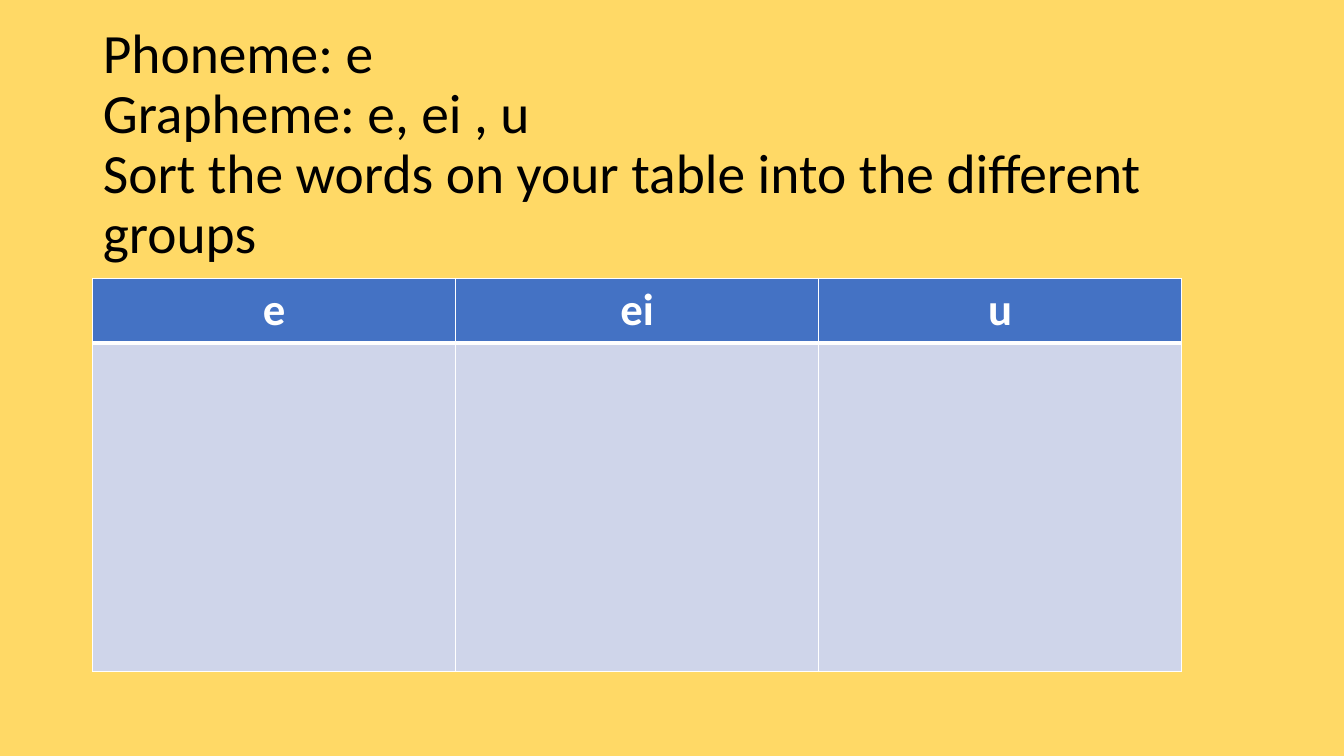
from lxml import etree
from pptx import Presentation
from pptx.dml.color import RGBColor
from pptx.enum.text import MSO_ANCHOR, MSO_AUTO_SIZE, PP_ALIGN
from pptx.oxml.ns import qn
from pptx.util import Inches, Pt

LEFT = PP_ALIGN.LEFT
CENTER = PP_ALIGN.CENTER
MIDDLE = MSO_ANCHOR.MIDDLE
NO_AUTOFIT = MSO_AUTO_SIZE.NONE

YELLOW = RGBColor(0xFF, 0xD9, 0x66)
BLACK = RGBColor(0x00, 0x00, 0x00)
WHITE = RGBColor(0xFF, 0xFF, 0xFF)
BLUE = RGBColor(0x44, 0x72, 0xC4)
PALE_BLUE = RGBColor(0xCF, 0xD5, 0xEA)

TITLE_ONLY = 5
INSTRUCTIONS = (
    "Phoneme: e\v"
    "Grapheme: e, ei , u\v"
    "Sort the words on your table into the different groups"
)
GRAPHEMES = ["e", "ei", "u"]
COLUMN_WIDTH = Inches(3.6)
ROW_HEIGHTS = [Inches(0.63), Inches(3.26)]
THIN, THICK = Pt(1), Pt(3)
HEADER_BORDERS = {"lnL": THIN, "lnR": THIN, "lnT": THIN, "lnB": THICK}
BODY_BORDERS = {"lnL": THIN, "lnR": THIN, "lnT": THICK, "lnB": THIN}


def set_values(target, values):
    for attribute, value in values.items():
        setattr(target, attribute, value)


def format_paragraph(paragraph, alignment, size, color, bold=False):
    paragraph.alignment = alignment
    for run in paragraph.runs:
        set_values(run.font, {"name": "Calibri", "size": size, "bold": bold})
        run.font.color.rgb = color


def add_instructions(slide):
    title = slide.shapes.title
    set_values(title, {
        "left": Inches(0.92), "top": Inches(0.72),
        "width": Inches(11.5), "height": Inches(1.45),
    })
    frame = title.text_frame
    set_values(frame, {
        "word_wrap": True, "auto_size": NO_AUTOFIT, "vertical_anchor": MIDDLE,
    })
    paragraph = frame.paragraphs[0]
    paragraph.text = INSTRUCTIONS
    paragraph.line_spacing = 0.9
    format_paragraph(paragraph, LEFT, Pt(39.6), BLACK)


def style_cell(cell, fill_color, borders):
    cell.fill.solid()
    cell.fill.fore_color.rgb = fill_color
    properties = cell._tc.get_or_add_tcPr()
    for position, (side, width) in enumerate(borders.items()):
        border = etree.Element(qn(f"a:{side}"), w=str(width))
        fill = etree.SubElement(border, qn("a:solidFill"))
        etree.SubElement(fill, qn("a:srgbClr"), val=str(WHITE))
        properties.insert(position, border)


def add_sorting_table(slide):
    table = slide.shapes.add_table(
        len(ROW_HEIGHTS), len(GRAPHEMES), Inches(0.92), Inches(2.76),
        COLUMN_WIDTH * len(GRAPHEMES), sum(ROW_HEIGHTS),
    ).table
    for row, height in zip(table.rows, ROW_HEIGHTS):
        row.height = height
    for column, grapheme in enumerate(GRAPHEMES):
        table.columns[column].width = COLUMN_WIDTH
        header = table.cell(0, column)
        header.text = grapheme
        format_paragraph(header.text_frame.paragraphs[0], CENTER, Pt(32), WHITE, True)
        style_cell(header, BLUE, HEADER_BORDERS)
        style_cell(table.cell(1, column), PALE_BLUE, BODY_BORDERS)


def main():
    presentation = Presentation()
    set_values(presentation, {
        "slide_width": Inches(13.33), "slide_height": Inches(7.5),
    })
    slide = presentation.slides.add_slide(presentation.slide_layouts[TITLE_ONLY])
    background = slide.background.fill
    background.solid()
    background.fore_color.rgb = YELLOW
    add_instructions(slide)
    add_sorting_table(slide)
    presentation.save("out.pptx")


if __name__ == "__main__":
    main()
